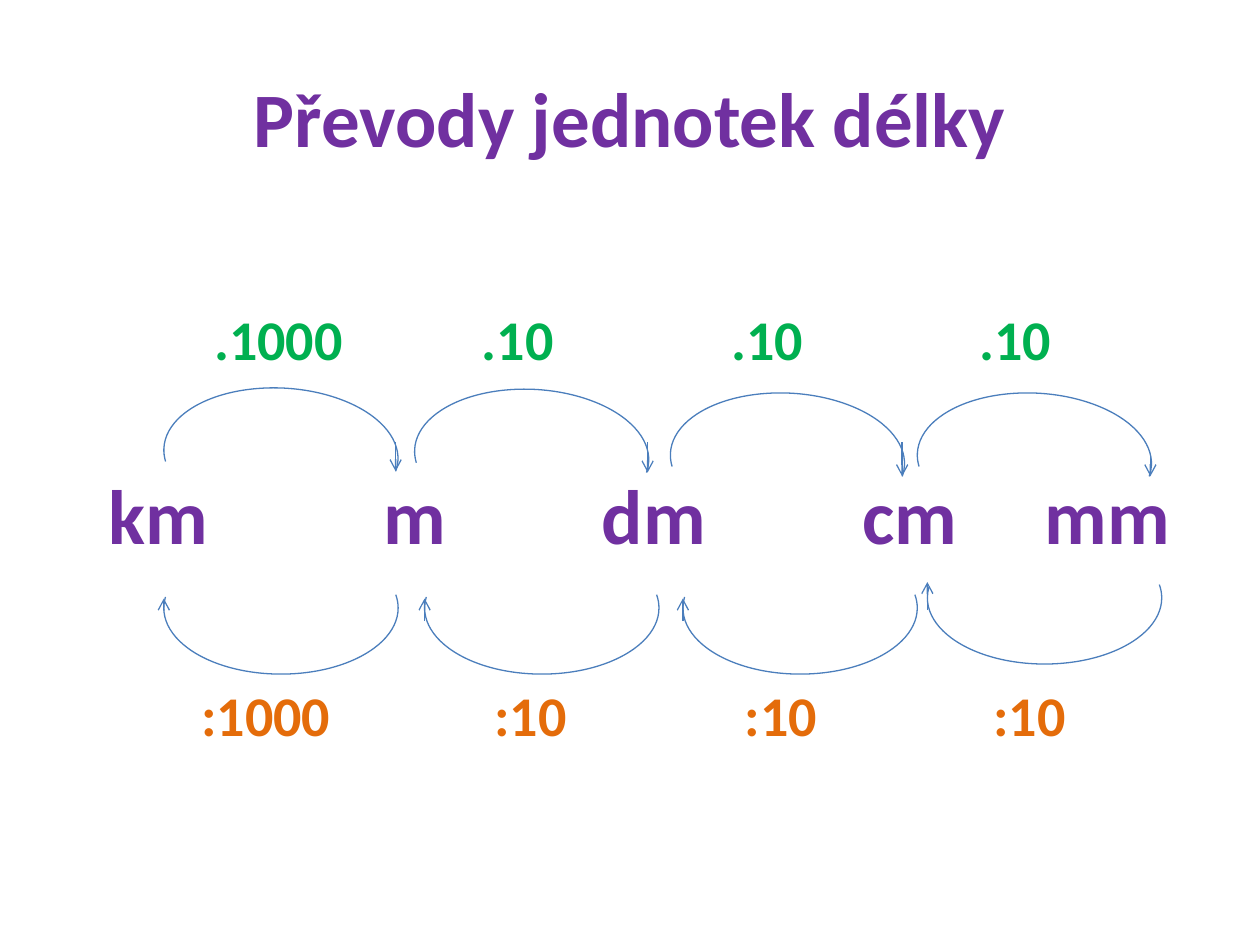
import pptx
import pptx.util
import pptx.dml.color
import pptx.enum.shapes
import pptx.enum.text
import pptx.oxml
import pptx.oxml.ns

Inches = pptx.util.Inches
Pt = pptx.util.Pt
RGBColor = pptx.dml.color.RGBColor

PURPLE = RGBColor(0x70, 0x30, 0xA0)
GREEN = RGBColor(0x00, 0xB0, 0x50)
ORANGE = RGBColor(0xE4, 0x6C, 0x0A)
BLUE = RGBColor(0x4B, 0x7E, 0xBC)


def write_centered(shape, text, size, color):
    paragraph = shape.text_frame.paragraphs[0]
    paragraph.alignment = pptx.enum.text.PP_ALIGN.CENTER
    run = paragraph.add_run()
    run.text = text
    values = {"name": "Calibri", "size": Pt(size), "bold": True}
    for name, value in values.items():
        setattr(run.font, name, value)
    run.font.color.rgb = color


def add_child(parent, tag, **attributes):
    child = pptx.oxml.parse_xml(f"<{tag} {pptx.oxml.ns.nsdecls('a')}/>")
    for name, value in attributes.items():
        child.set(name, value)
    parent.append(child)


presentation = pptx.Presentation()
presentation.slide_width = Inches(10)
presentation.slide_height = Inches(7.5)
slide = presentation.slides.add_slide(presentation.slide_layouts[5])

# Title
title = slide.shapes.title
title_frame = {"left": 0.5, "top": 0.3, "width": 9, "height": 1.25}
for name, value in title_frame.items():
    setattr(title, name, Inches(value))
write_centered(title, "Převody jednotek délky", 44, PURPLE)

# Multipliers, units and divisors: words, centres, top, height, size, colour
label_width = 1.4
rows = [
    ([".1000", ".10", ".10", ".10"], [2.21, 4.11, 6.09, 8.06], 2.42, 0.54, 32, GREEN),
    (["km", "m", "dm", "cm", "mm"], [1.26, 3.29, 5.19, 7.22, 8.79], 3.71, 0.75, 44, PURPLE),
    ([":1000", ":10", ":10", ":10"], [2.11, 4.21, 6.2, 8.17], 5.4, 0.54, 32, ORANGE),
]
for words, centers, top, height, size, color in rows:
    for word, center in zip(words, centers):
        label = slide.shapes.add_textbox(
            Inches(center - label_width / 2), Inches(top),
            Inches(label_width), Inches(height))
        label.text_frame.word_wrap = True
        for side in ("left", "top", "right", "bottom"):
            setattr(label.text_frame, f"margin_{side}", 0)
        write_centered(label, word, size, color)

# Arcs over and under the units
upper_arcs = [(1.3, 3.08), (3.29, 3.09), (5.32, 3.12), (7.28, 3.12)]
lower_arcs = [(1.3, 4.3), (3.37, 4.3), (5.42, 4.3), (7.36, 4.22)]
for positions, rotation in ((upper_arcs, 3), (lower_arcs, 180)):
    for left, top in positions:
        arc = slide.shapes.add_shape(
            pptx.enum.shapes.MSO_SHAPE.ARC,
            Inches(left), Inches(top), Inches(1.86), Inches(1.05))
        arc.adjustments[0] = 104.038
        arc.adjustments[1] = 3.282
        arc.rotation = rotation
        arc.shadow.inherit = False
        arc.fill.background()
        arc.line.color.rgb = BLUE
        arc.line.width = Pt(0.75)

# Arrowheads at the arc ends: x, start y, end y
arrows = [
    (3.14, 3.51, 3.74), (5.14, 3.51, 3.75), (7.16, 3.51, 3.78), (9.13, 3.6, 3.78),
    (1.3, 4.83, 4.75), (3.37, 4.93, 4.75), (5.42, 4.93, 4.75), (7.36, 4.84, 4.62),
]
for x, start, end in arrows:
    arrow = slide.shapes.add_connector(
        pptx.enum.shapes.MSO_CONNECTOR.STRAIGHT,
        Inches(x), Inches(start), Inches(x), Inches(end))
    arrow.line.color.rgb = BLUE
    arrow.line.width = Pt(0.75)
    add_child(arrow.line._get_or_add_ln(), "a:tailEnd", type="arrow")
    add_child(arrow._element.spPr, "a:effectLst")

presentation.save("out.pptx")
